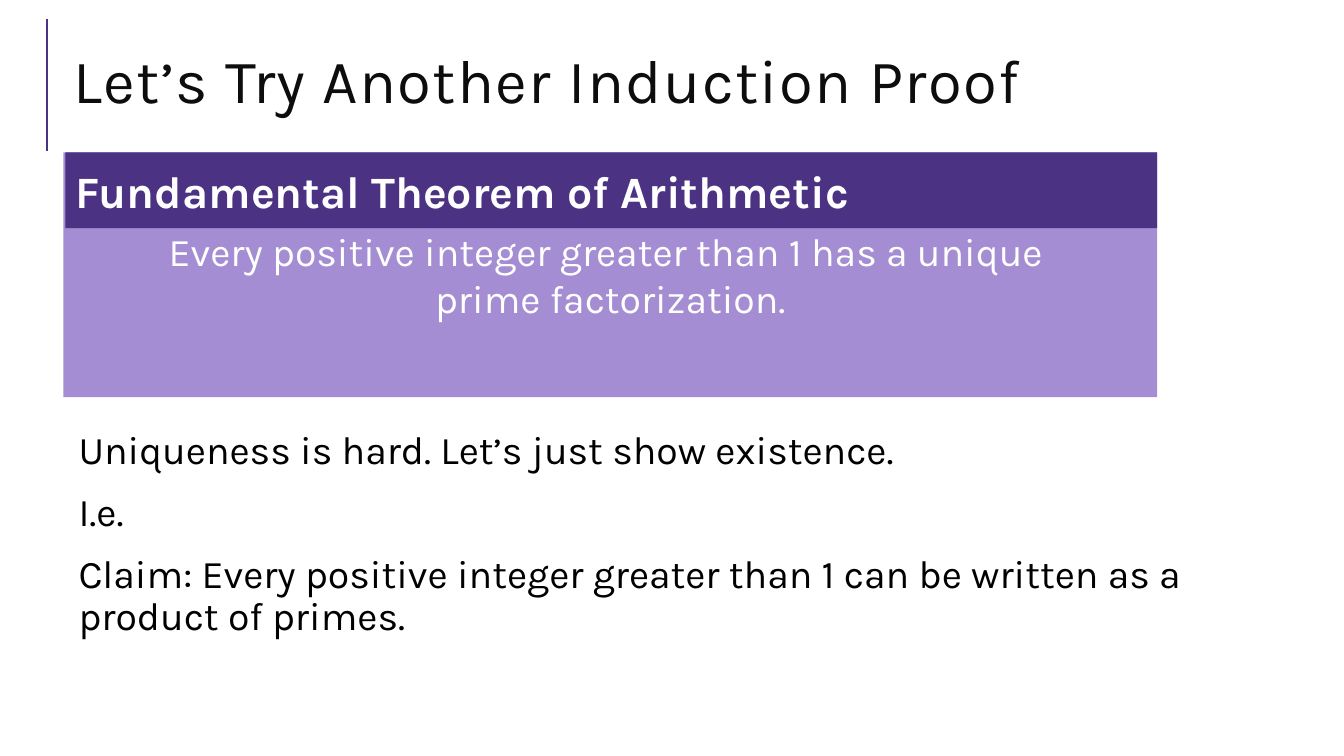
"""Build the slide that states the Fundamental Theorem of Arithmetic."""
import dataclasses
import typing

import pptx
import pptx.dml.color
import pptx.enum.shapes
import pptx.enum.text
import pptx.oxml
import pptx.oxml.ns
import pptx.util

Cm = pptx.util.Cm
Pt = pptx.util.Pt
Align = pptx.enum.text.PP_ALIGN
Anchor = pptx.enum.text.MSO_ANCHOR

FONT = "Karla"
DARK = "4C3282"
LIGHT = "A48DD3"
WHITE = "FFFFFF"
LEFT = 1.6
WIDE = 31.06


@dataclasses.dataclass
class Band:
    left: float
    width: float
    height: float
    fill: str
    lines: list[str]
    style: dict[str, typing.Any]


def tint(code: str) -> pptx.dml.color.RGBColor:
    """Turn a hex string into a colour."""
    return pptx.dml.color.RGBColor.from_string(code)


def place(shape: typing.Any, left: float, top: float, width: float, height: float) -> None:
    """Set the position and size of a shape in centimetres."""
    shape.left, shape.top = Cm(left), Cm(top)
    shape.width, shape.height = Cm(width), Cm(height)


def write(frame: typing.Any, lines: list[str], *, size: float, color: str,
          bold: bool = False, align: Align = Align.LEFT,
          anchor: Anchor = Anchor.MIDDLE, leading: float = 1.0,
          before: float = 0, after: float = 0, track: int = 0) -> None:
    """Fill a text frame with one formatted paragraph per line."""
    frame.word_wrap = True
    frame.auto_size = pptx.enum.text.MSO_AUTO_SIZE.NONE
    frame.vertical_anchor = anchor
    for i, line in enumerate(lines):
        para = frame.paragraphs[0] if i == 0 else frame.add_paragraph()
        para.alignment = align
        para.line_spacing = leading
        para.space_before, para.space_after = Pt(before), Pt(after)
        run = para.add_run()
        run.text = line
        run.font.name = FONT
        run.font.size = Pt(size)
        run.font.bold = bold
        run.font.color.rgb = tint(color)
        if track:
            run.font._element.set("spc", str(track))


def draw(group: typing.Any, band: Band, top: float) -> None:
    """Add one filled band with its text to a group."""
    box = group.shapes.add_shape(
        pptx.enum.shapes.MSO_SHAPE.RECTANGLE,
        Cm(band.left), Cm(top), Cm(band.width), Cm(band.height))
    box.shadow.inherit = False
    box.fill.solid()
    box.fill.fore_color.rgb = tint(band.fill)
    box.line.fill.background()
    write(box.text_frame, band.lines, color=WHITE, **band.style)


def rule(slide: typing.Any, x: float, start: float, end: float) -> None:
    """Add the upright accent line beside the title."""
    line = slide.shapes.add_connector(
        pptx.enum.shapes.MSO_CONNECTOR.STRAIGHT, Cm(x), Cm(start), Cm(x), Cm(end))
    line.line.color.rgb = tint(DARK)
    line.line.width = Pt(1.5)
    props = line._element.spPr
    props.append(pptx.oxml.parse_xml(
        f"<a:effectLst {pptx.oxml.ns.nsdecls('a')}/>"))


def main() -> None:
    """Build and save the slide."""
    deck = pptx.Presentation()
    deck.slide_width, deck.slide_height = Cm(33.87), Cm(19.05)
    slide = deck.slides.add_slide(deck.slide_layouts[5])
    rule(slide, 1.19, 3.81, 0.48)

    title = slide.shapes.title
    place(title, LEFT, 0.74, WIDE, 2.82)
    write(title.text_frame, ["Let’s Try Another Induction Proof"],
          size=44, color="0D0D0D", leading=0.8, track=100)

    body = slide.shapes.add_textbox(Cm(LEFT), Cm(10.72), Cm(WIDE), Cm(6.81))
    frame = body.text_frame
    frame.margin_left = Cm(0.38)
    frame.margin_top = frame.margin_right = frame.margin_bottom = Cm(0.13)
    write(frame, [
        "Uniqueness is hard. Let’s just show existence.",
        "I.e.",
        "Claim: Every positive integer greater than 1 can be written as a product of primes.",
    ], size=28, color="000000", anchor=Anchor.TOP, leading=0.9, before=12, after=2)

    bands = [
        Band(LEFT, 27.56, 6.17, LIGHT,
             ["Every positive integer greater than 1 has a unique ", "prime factorization."],
             {"size": 28, "align": Align.CENTER}),
        Band(1.65, 27.51, 1.91, DARK, ["Fundamental Theorem of Arithmetic"],
             {"size": 32, "bold": True}),
    ]
    group = slide.shapes.add_group_shape()
    for band in bands:
        draw(group, band, 3.84)

    deck.save("out.pptx")


if __name__ == "__main__":
    main()
